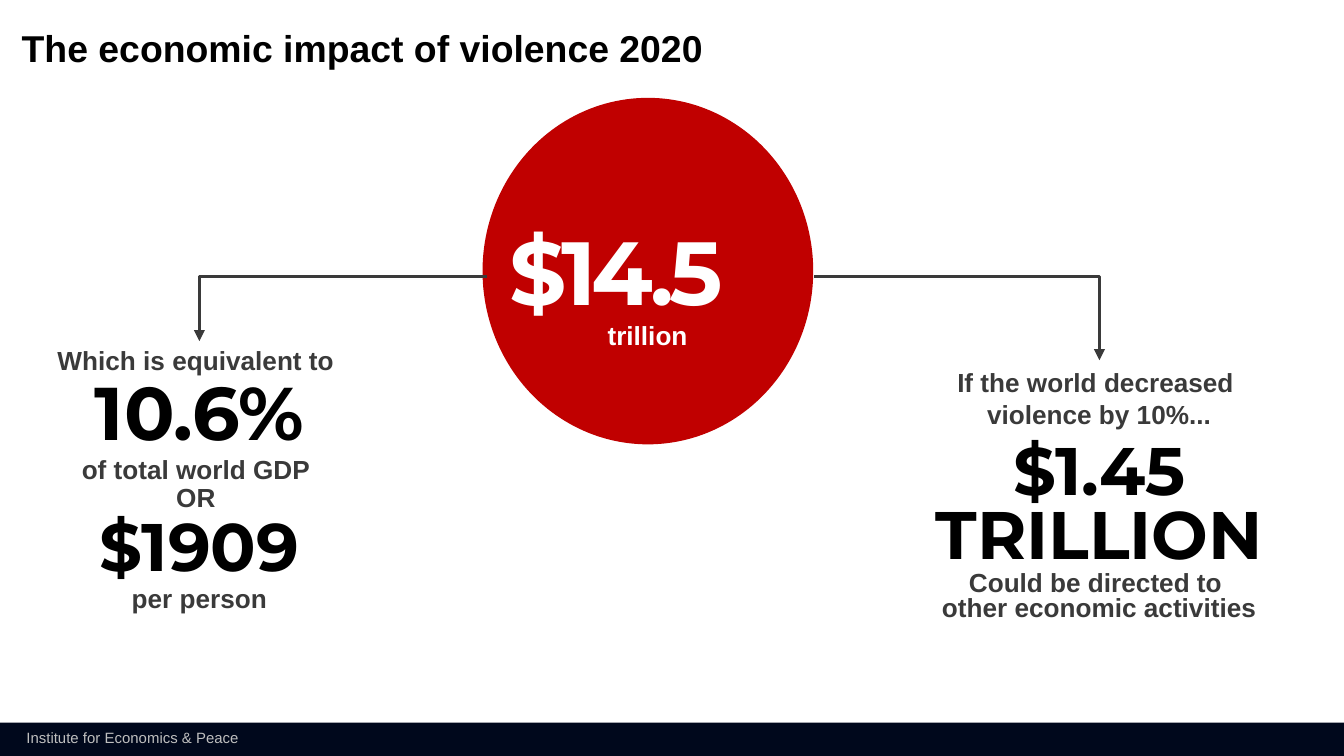
import pptx
import pptx.util
import pptx.dml.color
import pptx.enum.shapes
import pptx.enum.text
import pptx.oxml
import pptx.oxml.ns

Cm, Pt = pptx.util.Cm, pptx.util.Pt
ALIGN = pptx.enum.text.PP_ALIGN
ANCHOR = pptx.enum.text.MSO_ANCHOR
SHAPE = pptx.enum.shapes.MSO_SHAPE
qn = pptx.oxml.ns.qn

HEX = {
    "navy": "00081C",
    "red": "C00000",
    "dark": "3A3A3A",
    "black": "000000",
    "white": "FFFFFF",
    "pale": "BFBFBF",
}


def color(name):
    return pptx.dml.color.RGBColor.from_string(HEX[name])


class Deck:
    body = "Arial"
    big = "Montserrat"

    def __init__(self, width, height):
        self.prs = pptx.Presentation()
        self.prs.slide_width, self.prs.slide_height = Cm(width), Cm(height)
        self.slide = self.prs.slides.add_slide(self.prs.slide_layouts[5])

    def fill(self, frame, lines, align, space, inset=True, wrap=True):
        """Fill a frame with (text, size, font, colour, bold) lines."""
        frame.word_wrap = wrap
        frame.auto_size = pptx.enum.text.MSO_AUTO_SIZE.NONE
        if not inset:
            frame.margin_left = frame.margin_right = 0
            frame.margin_top = frame.margin_bottom = 0
        frame.text = "\n".join(line[0] for line in lines)
        for para, (_, size, font, tone, bold) in zip(frame.paragraphs, lines):
            para.alignment = align
            para.line_spacing = space
            for run in para.runs:
                run.font.size = Pt(size)
                run.font.name = font
                run.font.bold = bold
                run.font.color.rgb = color(tone)

    def title(self, box, text):
        shape = self.slide.shapes.title
        shape.left, shape.top, shape.width, shape.height = map(Cm, box)
        shape.text_frame.vertical_anchor = ANCHOR.MIDDLE
        self.fill(shape.text_frame, [(text, 20, self.body, "black", True)],
                  ALIGN.LEFT, 0.9, inset=False)

    def text(self, box, lines, align=ALIGN.CENTER, space=0.9, **style):
        shape = self.slide.shapes.add_textbox(*map(Cm, box))
        self.fill(shape.text_frame, lines, align, space, **style)
        return shape

    def note(self, text, tone="dark"):
        return text, 14, self.body, tone, True

    def figure(self, text, size=36, tone="black"):
        return text, size, self.big, tone, True

    def shape(self, kind, box, tone):
        shape = self.slide.shapes.add_shape(kind, *map(Cm, box))
        shape.shadow.inherit = False
        shape.fill.solid()
        shape.fill.fore_color.rgb = color(tone)
        shape.line.fill.background()

    def arrow(self, start, end):
        """Draw an arrow that runs sideways, then turns down."""
        line = self.slide.shapes.add_connector(
            pptx.enum.shapes.MSO_CONNECTOR.ELBOW, *map(Cm, start + end))
        line.line.color.rgb = color("dark")
        line.line.width = Pt(1.5)
        props = line._element.spPr
        props.find(qn("a:prstGeom")).set("prst", "bentConnector2")
        tip = pptx.oxml.parse_xml(
            '<a:tailEnd xmlns:a="http://schemas.openxmlformats.org/'
            'drawingml/2006/main" type="triangle"/>')
        props.find(qn("a:ln")).append(tip)
        props.append(props.makeelement(qn("a:effectLst"), {}))


def main():
    deck = Deck(25.4, 14.29)
    note, figure = deck.note, deck.figure

    deck.shape(SHAPE.RECTANGLE, (0, 13.66, 25.4, 0.63), "navy")
    deck.text((0.25, 13.64, 4.57, 0.61),
              [("Institute for Economics & Peace", 8, deck.body, "pale", False)],
              align=ALIGN.LEFT, space=1.0, wrap=False)
    deck.title((0.41, 0.58, 13.36, 0.76), "The economic impact of violence 2020")

    deck.shape(SHAPE.OVAL, (9.12, 1.85, 6.25, 6.55), "red")
    deck.arrow((9.2, 5.22), (3.77, 6.45))
    deck.arrow((15.39, 5.22), (20.78, 6.81))

    deck.text((0.81, 6.45, 5.92, 5.33), [
        note("Which is equivalent to "),
        figure("10.6%", 40),
        note("of total world GDP "),
        note("OR "),
        figure("$1909"),
        note("per person"),
    ])
    deck.text((16.66, 6.81, 8.23, 1.45), [
        note("If the world decreased "),
        note("violence by 10%..."),
    ], space=1.0)
    deck.text((16.66, 8.26, 8.23, 3.68), [
        figure("$1.45 TRILLION"),
        note("Could be directed to "),
        note("other economic activities"),
    ], space=0.8)

    total = deck.text((9.63, 4.32, 7.04, 1.75), [figure("$14.5", 48, "white")],
                      align=ALIGN.LEFT, inset=False)
    run = total.text_frame.paragraphs[0].runs[0]
    run.font._element.set("spc", "-250")
    deck.text((5.89, 6.02, 12.7, 0.74), [note("trillion", "white")], space=0.8)

    deck.prs.save("out.pptx")


if __name__ == "__main__":
    main()
